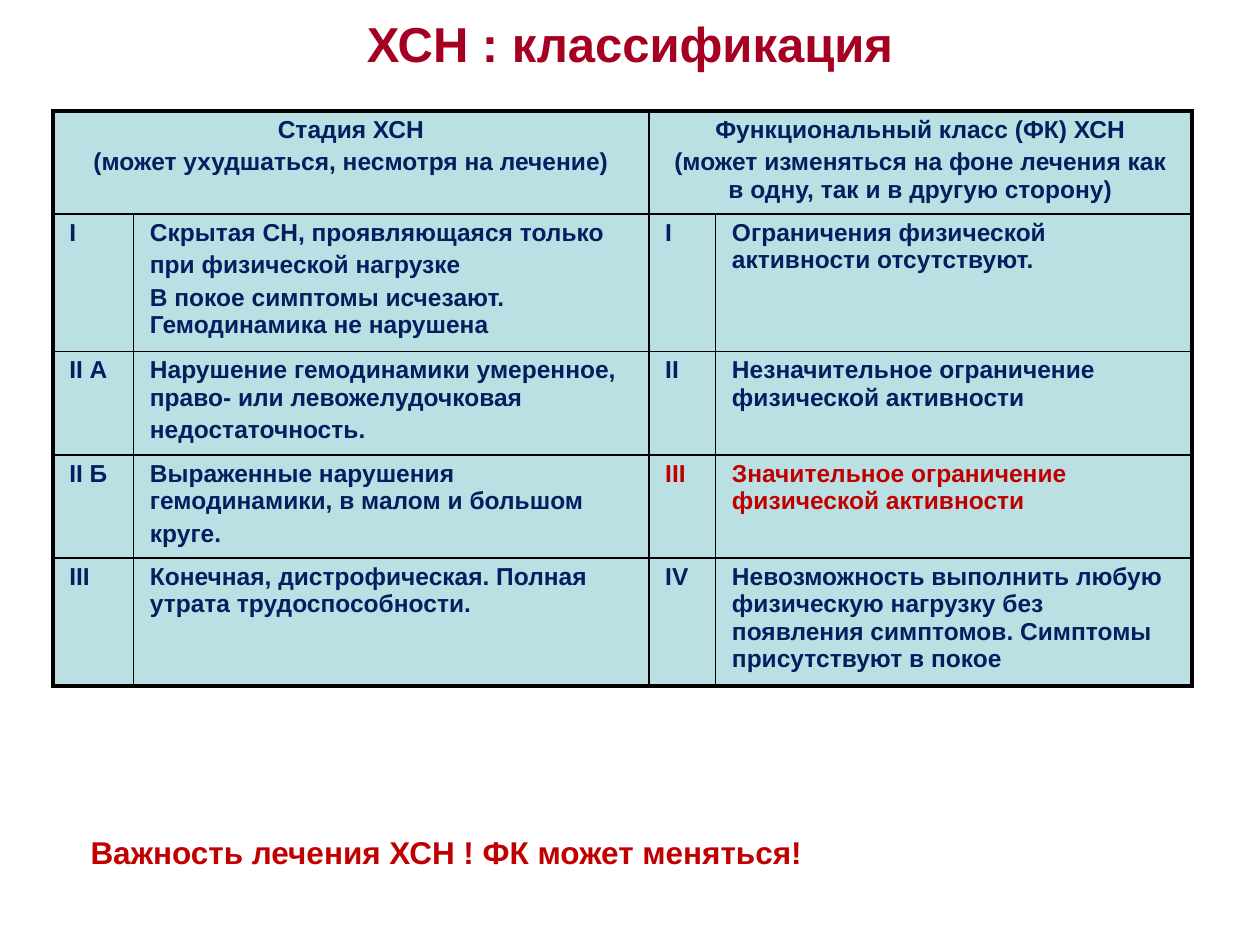
from dataclasses import dataclass

from lxml import etree
from pptx import Presentation
from pptx.dml.color import RGBColor
from pptx.enum.text import MSO_ANCHOR, MSO_AUTO_SIZE, PP_ALIGN
from pptx.oxml.ns import qn
from pptx.util import Inches, Pt

CENTER, LEFT = PP_ALIGN.CENTER, PP_ALIGN.LEFT
MIDDLE = MSO_ANCHOR.MIDDLE
GROW = MSO_AUTO_SIZE.SHAPE_TO_FIT_TEXT

FONT = "Arial"
COLORS = {
    "title": "A50021",
    "text": "002060",
    "accent": "C00000",
    "cell": "BBE0E3",
    "paper": "FFFFFF",
    "border": "000000",
}
COLUMN_WIDTHS = (0.64, 4.09, 0.53, 3.78)
ROW_HEIGHTS = (0.70, 0.68, 0.65, 0.57, 0.62)
CELL_TEXT_SIZE = 14
OUTER_LINE, INNER_LINE = 2.25, 1


@dataclass(frozen=True)
class Grade:
    """One numbered entry: a stage or a functional class."""
    numeral: str
    description: tuple[str, ...]
    color: str = "text"


HEADINGS = (
    ("Стадия ХСН", "(может ухудшаться, несмотря на лечение)"),
    ("Функциональный класс (ФК) ХСН",
     "(может изменяться на фоне лечения как в одну, так и в другую сторону)"),
)
STAGES = (
    Grade("I", ("Скрытая СН, проявляющаяся только", "при физической нагрузке",
                "В покое симптомы исчезают. Гемодинамика не нарушена")),
    Grade("II А", ("Нарушение гемодинамики умеренное, право- или левожелудочковая",
                   "недостаточность.")),
    Grade("II Б", ("Выраженные нарушения гемодинамики, в малом и большом",
                   "круге.")),
    Grade("III", ("Конечная, дистрофическая. Полная утрата трудоспособности.",)),
)
CLASSES = (
    Grade("I", ("Ограничения физической активности отсутствуют.",)),
    Grade("II", ("Незначительное ограничение физической активности",)),
    Grade("III", ("Значительное ограничение физической активности",), "accent"),
    Grade("IV", ("Невозможность выполнить любую физическую нагрузку без появления "
                 "симптомов. Симптомы присутствуют в покое",)),
)


def rgb(name: str) -> RGBColor:
    return RGBColor.from_string(COLORS[name])


def write(frame, lines: tuple[str, ...], size: float, color: str, align) -> None:
    """Fill a text frame with bold paragraphs, spaced by a fifth of the text size."""
    for index, line in enumerate(lines):
        paragraph = frame.add_paragraph() if index else frame.paragraphs[0]
        paragraph.alignment = align
        if index:
            paragraph.space_before = Pt(size * 0.2)
        run = paragraph.add_run()
        run.text = line
        run.font.name, run.font.size, run.font.bold = FONT, Pt(size), True
        run.font.color.rgb = rgb(color)


def add_borders(cell, widths: dict[str, float]) -> None:
    properties = cell._tc.get_or_add_tcPr()
    for position, (side, width) in enumerate(widths.items()):
        line = etree.Element(qn(f"a:ln{side}"), w=str(Pt(width)))
        fill = etree.SubElement(line, qn("a:solidFill"))
        etree.SubElement(fill, qn("a:srgbClr"), val=COLORS["border"])
        properties.insert(position, line)


def style_cell(cell, row: int, column: int) -> None:
    cell.fill.solid()
    cell.fill.fore_color.rgb = rgb("cell")
    cell.margin_left = cell.margin_right = Inches(0.13)
    cell.margin_top = cell.margin_bottom = Inches(0.04)
    on_edge = {
        "L": column == 0,
        "R": column == len(COLUMN_WIDTHS) - 1,
        "T": row == 0,
        "B": row == len(ROW_HEIGHTS) - 1,
    }
    add_borders(cell, {side: OUTER_LINE if edge else INNER_LINE
                       for side, edge in on_edge.items()})


def add_classification(slide) -> None:
    frame = slide.shapes.add_table(
        len(ROW_HEIGHTS), len(COLUMN_WIDTHS),
        Inches(0.42), Inches(0.88), Inches(9.03), Inches(4.58))
    table = frame.table
    table.first_row = table.horz_banding = False
    for column, width in zip(table.columns, COLUMN_WIDTHS):
        column.width = Inches(width)
    for row, height in zip(table.rows, ROW_HEIGHTS):
        row.height = Inches(height)
    for row in range(len(ROW_HEIGHTS)):
        for column in range(len(COLUMN_WIDTHS)):
            style_cell(table.cell(row, column), row, column)

    for half, (heading, grades) in enumerate(zip(HEADINGS, (STAGES, CLASSES))):
        first = 2 * half
        header = table.cell(0, first)
        header.merge(table.cell(0, first + 1))
        # The merged cell takes its right border from the last column it covers
        if first + 1 == len(COLUMN_WIDTHS) - 1:
            header._tc.tcPr.find(qn("a:lnR")).set("w", str(Pt(OUTER_LINE)))
        write(header.text_frame, heading, CELL_TEXT_SIZE, "text", CENTER)
        for row, grade in enumerate(grades, start=1):
            for column, lines in enumerate(((grade.numeral,), grade.description), first):
                write(table.cell(row, column).text_frame, lines,
                      CELL_TEXT_SIZE, grade.color, LEFT)


def main() -> None:
    deck = Presentation()
    deck.slide_width, deck.slide_height = Inches(10), Inches(7.5)
    slide = deck.slides.add_slide(deck.slide_layouts[6])

    title = slide.shapes.add_textbox(
        Inches(0.38), Inches(0.15), Inches(9.24), Inches(0.38))
    title.text_frame.word_wrap = True
    title.text_frame.vertical_anchor = MIDDLE
    write(title.text_frame, ("ХСН : классификация",), 28, "title", CENTER)

    add_classification(slide)

    conclusion = slide.shapes.add_textbox(
        Inches(0.62), Inches(6.56), Inches(5.91), Inches(0.4))
    conclusion.fill.solid()
    conclusion.fill.fore_color.rgb = rgb("paper")
    conclusion.text_frame.word_wrap = False
    conclusion.text_frame.auto_size = GROW
    write(conclusion.text_frame, ("Важность лечения ХСН ! ФК может меняться!",),
          18, "accent", LEFT)

    deck.save("out.pptx")


if __name__ == "__main__":
    main()
